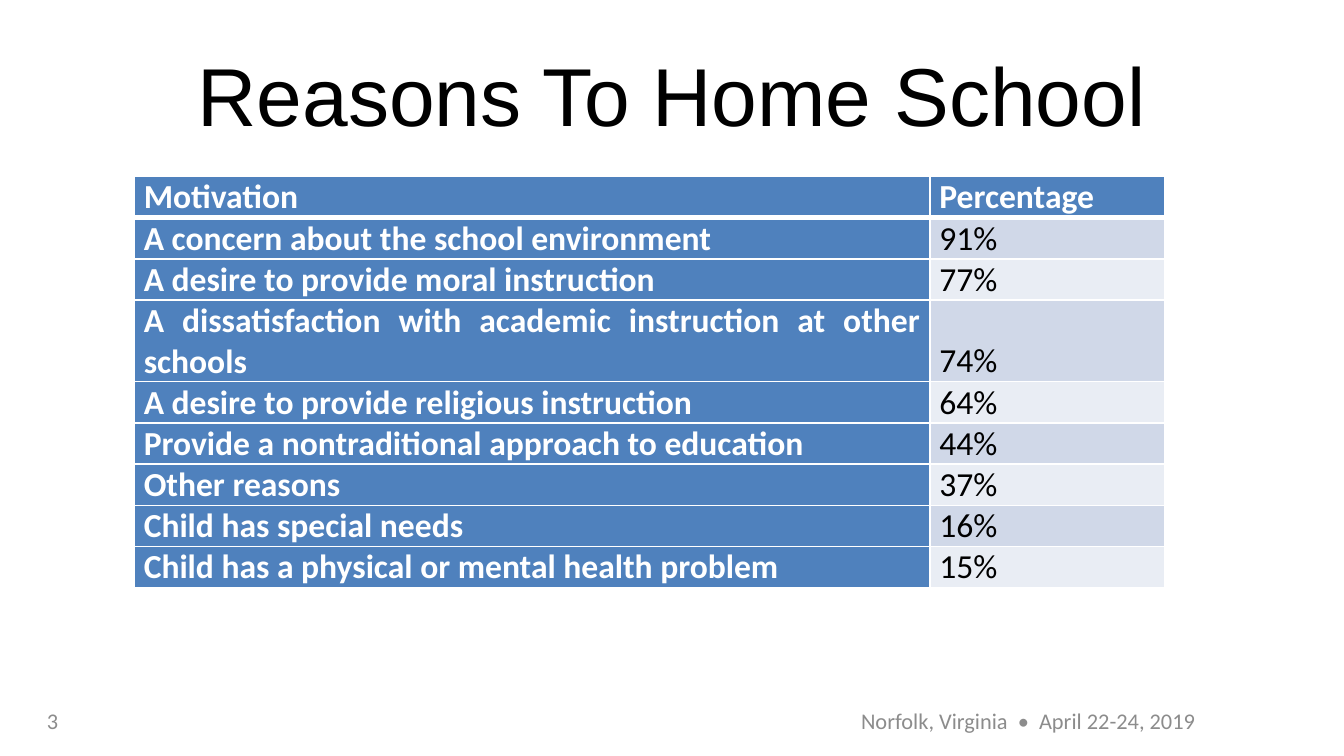
from lxml import etree
from pptx import Presentation
from pptx.dml.color import RGBColor
from pptx.enum.text import MSO_ANCHOR, PP_ALIGN
from pptx.oxml.ns import qn
from pptx.util import Inches, Pt

MIDDLE, BOTTOM = MSO_ANCHOR.MIDDLE, MSO_ANCHOR.BOTTOM
LEFT, CENTER, JUSTIFY = PP_ALIGN.LEFT, PP_ALIGN.CENTER, PP_ALIGN.JUSTIFY

BLACK = RGBColor(0x00, 0x00, 0x00)
WHITE = RGBColor(0xFF, 0xFF, 0xFF)
GRAY = RGBColor(0x8C, 0x8C, 0x8C)
BLUE = RGBColor(0x4F, 0x81, 0xBD)
BAND_DARK = RGBColor(0xD0, 0xD8, 0xE8)
BAND_LIGHT = RGBColor(0xE9, 0xED, 0xF4)

COLUMN_WIDTHS = (5.92, 1.75)
ROW_HEIGHTS = (0.31, 0.3, 0.28, 0.45, 0.28, 0.28, 0.28, 0.28, 0.3)
REASONS = (
    ("Motivation", "Percentage"),
    ("A concern about the school environment", "91%"),
    ("A desire to provide moral instruction", "77%"),
    ("A dissatisfaction with academic instruction at other schools", "74%"),
    ("A desire to provide religious instruction", "64%"),
    ("Provide a nontraditional approach to education", "44%"),
    ("Other reasons", "37%"),
    ("Child has special needs", "16%"),
    ("Child has a physical or mental health problem", "15%"),
)


def set_text(tf, text, size=18, color=BLACK, font="Calibri", bold=False, align=LEFT):
    """Write one formatted run into a text frame."""
    p = tf.paragraphs[0]
    p.alignment = align
    r = p.add_run()
    r.text = text
    r.font.size = Pt(size)
    r.font.name = font
    r.font.bold = bold
    r.font.color.rgb = color


def add_title(s, text):
    """Place and fill the title placeholder."""
    sp = s.shapes.title
    sp.left, sp.top, sp.width, sp.height = map(Inches, (0.5, 0.23, 9, 0.94))
    sp.text_frame.vertical_anchor = MIDDLE
    set_text(sp.text_frame, text, size=44, font="Arial", align=CENTER)


def add_footer(s, text, left, width, align):
    """Add a gray text box on the footer line."""
    sp = s.shapes.add_textbox(Inches(left), Inches(5.21), Inches(width), Inches(0.3))
    tf = sp.text_frame
    tf.word_wrap = True
    tf.vertical_anchor = MIDDLE
    set_text(tf, text, size=12, color=GRAY, align=align)


def set_borders(cell, bottom):
    """Draw white cell borders with the given bottom width in points."""
    tc_pr = cell._tc.get_or_add_tcPr()
    for side, width in (("L", 1), ("R", 1), ("T", 1), ("B", bottom)):
        ln = etree.SubElement(tc_pr, qn(f"a:ln{side}"), w=str(Pt(width)))
        fill = etree.SubElement(ln, qn("a:solidFill"))
        etree.SubElement(fill, qn("a:srgbClr"), val=str(WHITE))


def format_cell(cell, text, fill, heading, bottom):
    """Fill a table cell with text, color and borders."""
    cell.margin_left = cell.margin_right = Inches(0.07)
    cell.margin_top = cell.margin_bottom = Pt(0.25)
    cell.vertical_anchor = BOTTOM
    set_borders(cell, bottom)
    cell.fill.solid()
    cell.fill.fore_color.rgb = fill
    color = WHITE if heading else BLACK
    set_text(cell.text_frame, text, color=color, bold=heading, align=JUSTIFY)


def add_reasons_table(s):
    """Add the table of motivations and percentages."""
    frame = s.shapes.add_table(
        len(REASONS), len(COLUMN_WIDTHS), Inches(1), Inches(1.31),
        Inches(sum(COLUMN_WIDTHS)), Inches(sum(ROW_HEIGHTS)))
    table = frame.table
    table.first_col = True
    for column, width in zip(table.columns, COLUMN_WIDTHS):
        column.width = Inches(width)
    for i, (row, height) in enumerate(zip(table.rows, ROW_HEIGHTS)):
        row.height = Inches(height)
        band = BAND_DARK if i % 2 else BAND_LIGHT
        for j, text in enumerate(REASONS[i]):
            heading = i == 0 or j == 0
            fill = BLUE if heading else band
            format_cell(table.cell(i, j), text, fill, heading, 1 if i else 3)


def main():
    """Build and save the slide."""
    prs = Presentation()
    prs.slide_width = Inches(10)
    prs.slide_height = prs.slide_width * 9 // 16
    s = prs.slides.add_slide(prs.slide_layouts[5])
    add_title(s, "Reasons To Home School")
    add_footer(s, "Norfolk, Virginia  •  April 22-24, 2019 ", 5.83, 3.68, CENTER)
    add_footer(s, "3", 0.25, 2.33, LEFT)
    add_reasons_table(s)
    prs.save("out.pptx")


if __name__ == "__main__":
    main()
